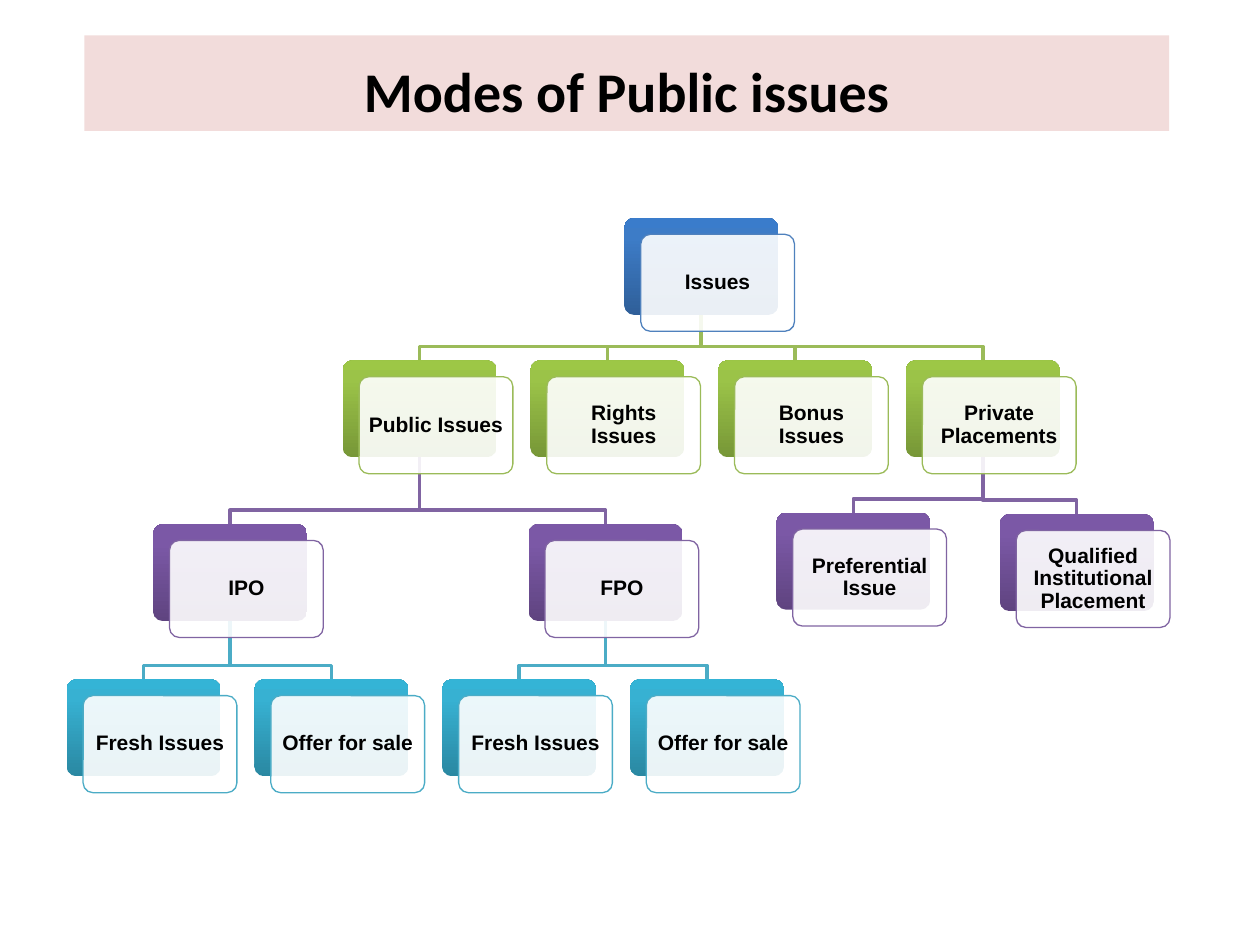
"""Builds a slide with a tree of the modes of public issues."""
from copy import deepcopy
from dataclasses import dataclass

from lxml import etree
from pptx import Presentation, util as u
from pptx.dml.color import RGBColor
from pptx.enum import shapes, text
from pptx.oxml.ns import qn


@dataclass(frozen=True)
class Theme:
    """Holds the colours, fonts and type sizes."""
    ink: str = "000000"
    paper: str = "FFFFFF"
    band: str = "F2DCDB"
    tones: tuple = (
        ("4F81BD", "2F5F99", "3D7CC7", "3A7CCB"),
        ("9BBB59", "779737", "9BC348", "9DC746"),
        ("8064A2", "5F4480", "7B58A6", "7C57A8"),
        ("4BACC6", "2A88A2", "37B1D2", "34B4D6"),
    )
    head: tuple = ("Calibri", 32)
    label: tuple = ("Arial", 12)


@dataclass(frozen=True)
class Node:
    """Names one card, its grid place and its children."""
    name: str
    col: float
    row: float
    kids: tuple = ()


class Chart:
    """Draws the title, links and cards on one slide."""
    left, top = 0.53, 1.73
    pitch, step = 1.49, 1.13
    wide, high = 1.22, 0.77
    shift, drop = 0.13, 0.11

    def __init__(self, slide, theme):
        """Keep the slide and its style."""
        self.slide, self.theme = slide, theme

    def spot(self, node):
        """Return the left and top of a node in inches."""
        return self.left + node.col * self.pitch, self.top + node.row * self.step

    def letter(self, shape, words, font, anchor):
        """Put bold centred words in a shape."""
        frame = shape.text_frame
        frame.text = words
        frame.word_wrap = True
        frame.auto_size = text.MSO_AUTO_SIZE.NONE
        frame.vertical_anchor = anchor
        frame.margin_left = frame.margin_right = u.Inches(0.05)
        frame.margin_top = frame.margin_bottom = u.Inches(0.05)
        para = frame.paragraphs[0]
        para.alignment = text.PP_ALIGN.CENTER
        para.line_spacing = 0.9
        para.font.name, para.font.size = font[0], u.Pt(font[1])
        para.font.bold = True
        para.font.color.rgb = RGBColor.from_string(self.theme.ink)

    def title(self, words, *box):
        """Place the title band at the given box in inches."""
        shape = self.slide.shapes.title
        shape.left, shape.top, shape.width, shape.height = map(u.Inches, box)
        shape.fill.solid()
        shape.fill.fore_color.rgb = RGBColor.from_string(self.theme.band)
        self.letter(shape, words, self.theme.head, text.MSO_ANCHOR.BOTTOM)

    def panel(self, x, y):
        """Add a plain rounded panel."""
        shape = self.slide.shapes.add_shape(
            shapes.MSO_SHAPE.ROUNDED_RECTANGLE,
            *map(u.Inches, (x, y, self.wide, self.high)))
        shape.adjustments[0] = 0.1
        shape.shadow.inherit = False
        return shape

    def shade(self, shape, hues):
        """Fill a shape with a three-stop upright gradient."""
        shape.fill.gradient()
        shape.fill.gradient_angle = 90
        stops = shape.element.spPr.find(".//" + qn("a:gsLst"))
        stops.insert(1, deepcopy(stops[0]))
        for stop, place, hue in zip(shape.fill.gradient_stops, (0, 0.8, 1), hues):
            stop.position = place
            stop.color.rgb = RGBColor.from_string(hue)

    def card(self, node, depth):
        """Add a node as a shaded base under a clear label card."""
        edge, *hues = self.theme.tones[depth]
        x, y = self.spot(node)
        base = self.panel(x, y)
        self.shade(base, hues)
        base.line.fill.background()
        front = self.panel(x + self.shift, y + self.shift)
        front.fill.solid()
        front.fill.fore_color.rgb = RGBColor.from_string(self.theme.paper)
        tint = front.element.spPr.find(qn("a:solidFill"))[0]
        etree.SubElement(tint, qn("a:alpha"), val="90000")
        front.line.color.rgb = RGBColor.from_string(edge)
        front.line.width = u.Pt(0.75)
        self.letter(front, node.name, self.theme.label, text.MSO_ANCHOR.MIDDLE)
        for kid in node.kids:
            self.card(kid, depth + 1)

    def link(self, node, depth=1):
        """Draw bent lines from a node to all below it."""
        x, y = self.spot(node)
        x, y = x + self.wide / 2, y + self.high
        for kid in node.kids:
            end, floor = self.spot(kid)
            end += self.wide / 2
            bend = floor - self.drop
            pen = self.slide.shapes.build_freeform(u.Inches(x), u.Inches(y))
            pen.add_line_segments(
                [(u.Inches(a), u.Inches(b))
                 for a, b in ((x, bend), (end, bend), (end, floor))], close=False)
            line = pen.convert_to_shape()
            line.shadow.inherit = False
            line.fill.background()
            line.line.color.rgb = RGBColor.from_string(self.theme.tones[depth][0])
            line.line.width = u.Pt(2)
            self.link(kid, depth + 1)


def branch(name, col):
    """Return an offer node with its two kinds of sale."""
    first = round(col)
    return Node(name, col, 2.15, (
        Node("Fresh Issues", first, 3.24),
        Node("Offer for sale", first + 1, 3.24)))


def main():
    """Build and save the slide."""
    deck = Presentation()
    deck.slide_width, deck.slide_height = u.Inches(10), u.Inches(7.5)
    chart = Chart(deck.slides.add_slide(deck.slide_layouts[5]), Theme())
    tree = Node("Issues", 2.97, 0, (
        Node("Public Issues", 1.47, 1, (branch("IPO", 0.46), branch("FPO", 2.46))),
        Node("Rights Issues", 2.47, 1),
        Node("Bonus Issues", 3.47, 1),
        Node("Private Placements", 4.47, 1, (
            Node("Preferential Issue", 3.78, 2.07),
            Node("Qualified Institutional Placement", 4.97, 2.08)))))
    chart.title("Modes of Public issues", 0.67, 0.28, 8.61, 0.76)
    chart.link(tree)
    chart.card(tree, 0)
    deck.save("out.pptx")


if __name__ == "__main__":
    main()
